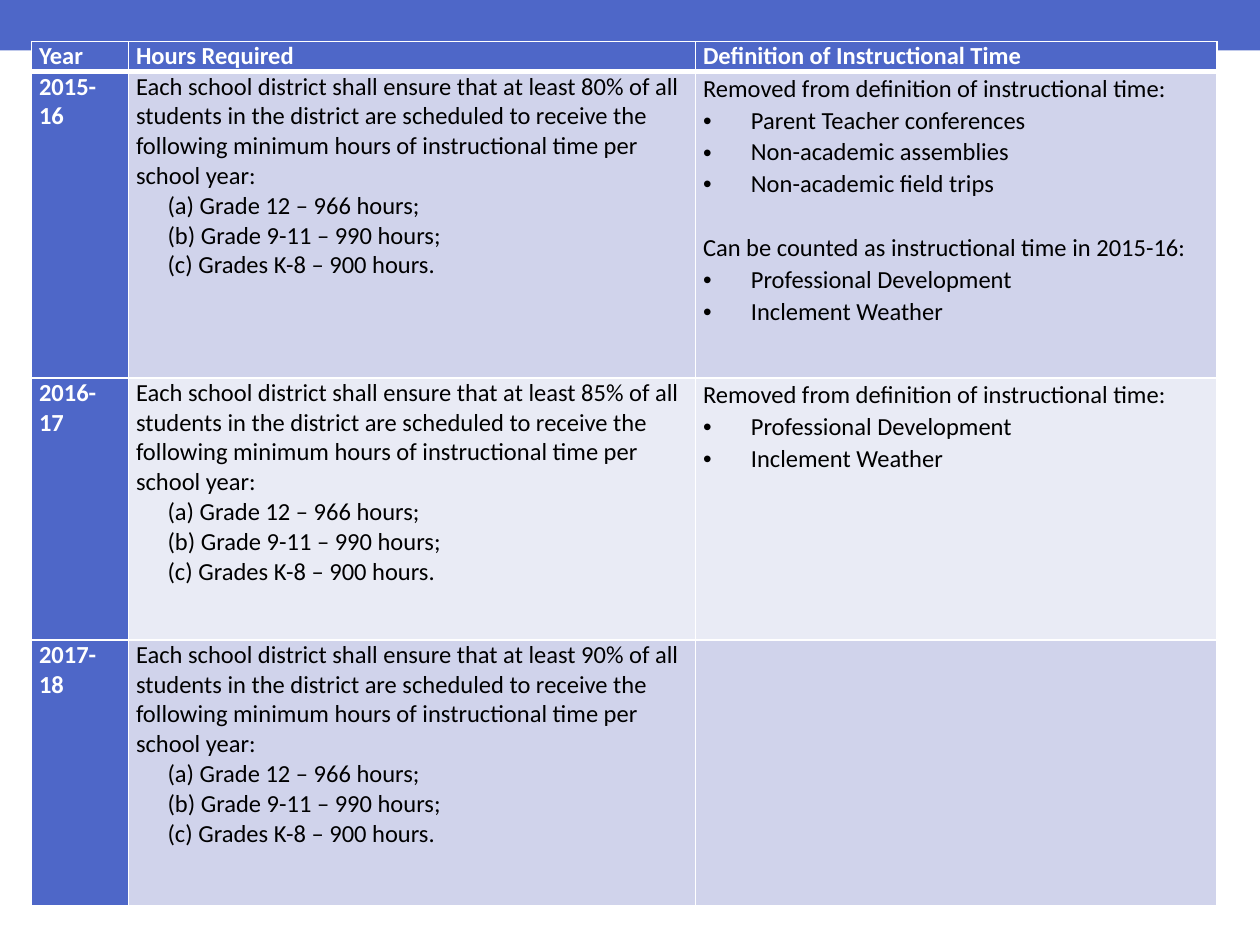
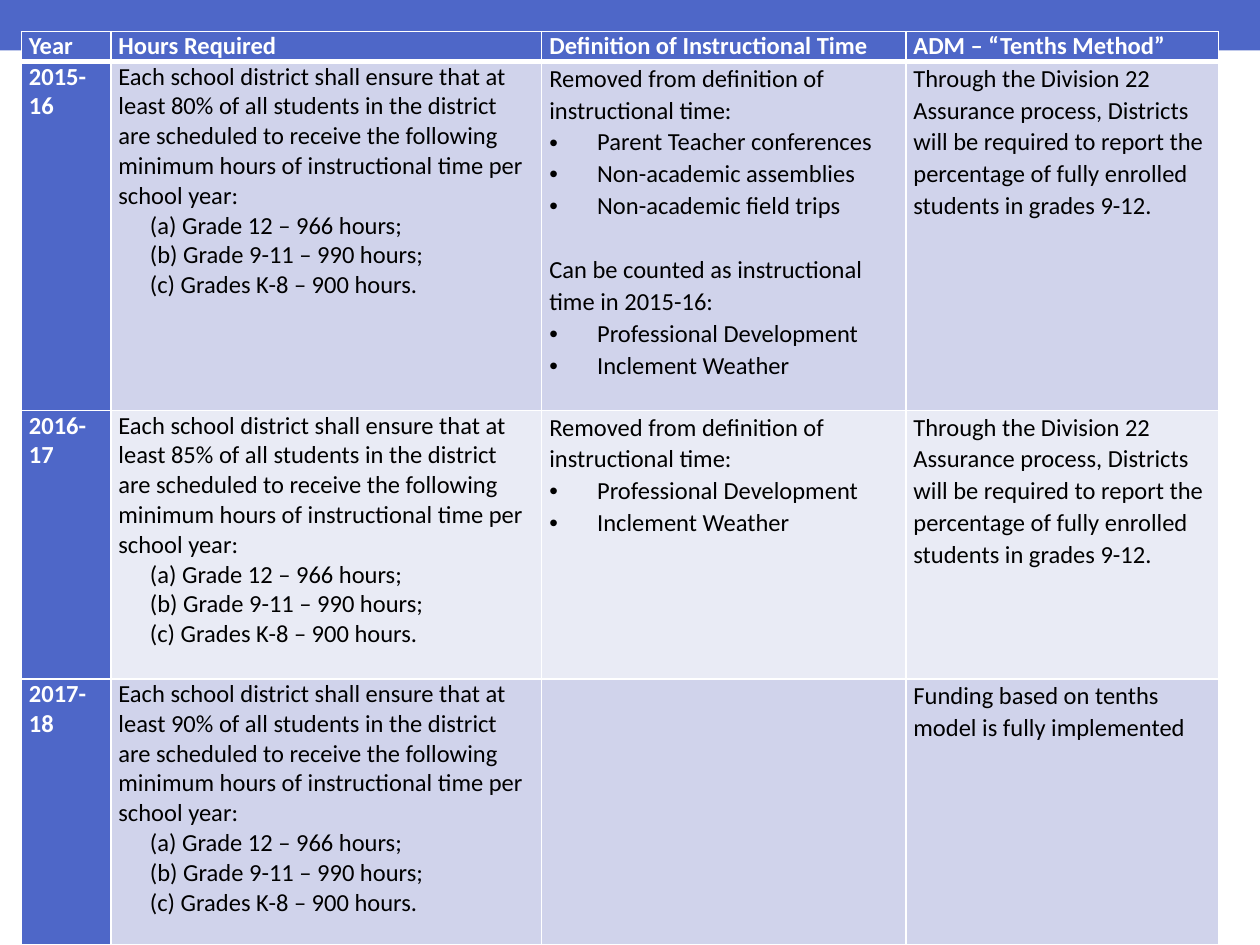
from lxml import etree
from pptx import Presentation
from pptx.dml.color import RGBColor
from pptx.enum.shapes import MSO_SHAPE
from pptx.oxml.ns import qn
from pptx.util import Emu, Inches, Pt

RECTANGLE = MSO_SHAPE.RECTANGLE

BLUE = RGBColor(0x4E, 0x67, 0xC8)
LAVENDER = RGBColor(0xD0, 0xD3, 0xEB)
PALE = RGBColor(0xE9, 0xEB, 0xF5)
WHITE = RGBColor(0xFF, 0xFF, 0xFF)
BLACK = RGBColor(0, 0, 0)

FONT, SIZE = "Calibri", Pt(14)
BAND_HEIGHT = Inches(0.4)
HEADER_HEIGHT = 0.24
CELL_MARGIN = Inches(0.06)
GRADE_INDENT = Inches(0.25)
BULLET_INDENT = Inches(0.38)
LOOSE = 1.07        # line spacing outside the year and hours columns
GROUP_GAP = Pt(18.2)  # one loose line between groups in a cell
THIN, THICK = Pt(1), Pt(3)

# Content: a paragraph is (kind, text)
HEADERS = ["Year", "Hours Required", "Definition of Instructional Time",
           "ADM – “Tenths Method”"]
YEARS = [("2015-16", 80), ("2016-17", 85), ("2017-18", 90)]
GRADES = ["(a) Grade 12 – 966 hours;", "(b) Grade 9-11 – 990 hours;",
          "(c) Grades K-8 – 900 hours."]
REMOVED = ("loose", "Removed from definition of instructional time:")
NEW_LIMITS = [("bullet", "Professional Development"),
              ("bullet", "Inclement Weather")]
DEFINITIONS = [
    [REMOVED,
     ("bullet", "Parent Teacher conferences"),
     ("bullet", "Non-academic assemblies"),
     ("bullet", "Non-academic field trips"),
     ("group", "Can be counted as instructional time in 2015-16:"),
     *NEW_LIMITS],
    [REMOVED, *NEW_LIMITS],
    [],
]
REPORTING = [("loose", "Through the Division 22 Assurance process, Districts will be "
              "required to report the percentage of fully enrolled students "
              "in grades 9-12.")]
ADM = [REPORTING, REPORTING,
       [("loose", "Funding based on tenths model is fully implemented")]]


def hours_required(percent):
    intro = (f"Each school district shall ensure that at least {percent}% of all "
             "students in the district are scheduled to receive the following "
             "minimum hours of instructional time per school year:")
    return [("plain", intro)] + [("grade", grade) for grade in GRADES]


def table_rows(column_count):
    """Rows of cells, header first, limited to the leading columns."""
    rows = [[[("plain", header)] for header in HEADERS]]
    for (year, percent), definition, adm in zip(YEARS, DEFINITIONS, ADM):
        rows.append([[("plain", year)], hours_required(percent), definition, adm])
    return [row[:column_count] for row in rows]


def add_band(prs, slide):
    band = slide.shapes.add_shape(RECTANGLE, 0, 0, prs.slide_width, BAND_HEIGHT)
    band.shadow.inherit = False
    band.fill.solid()
    band.fill.fore_color.rgb = BLUE
    band.line.fill.background()


def set_borders(cell, top, bottom):
    tc_pr = cell._tc.get_or_add_tcPr()
    for side, width in (("L", THIN), ("R", THIN), ("T", top), ("B", bottom)):
        line = etree.SubElement(tc_pr, qn(f"a:ln{side}"), w=str(width))
        fill = etree.SubElement(line, qn("a:solidFill"))
        etree.SubElement(fill, qn("a:srgbClr"), val=str(WHITE))


def format_paragraph(p, kind):
    p_pr = p._p.get_or_add_pPr()
    if kind == "grade":
        p_pr.set("marL", str(GRADE_INDENT))
    elif kind == "bullet":
        p_pr.set("marL", str(BULLET_INDENT))
        p_pr.set("indent", str(-BULLET_INDENT))
        etree.SubElement(p_pr, qn("a:buFont"), typeface="Arial")
        etree.SubElement(p_pr, qn("a:buChar"), char="•")
    if kind in ("loose", "bullet", "group"):
        p.line_spacing = LOOSE
    if kind == "group":
        p.space_before = GROUP_GAP


def write_cell(cell, paragraphs, color, bold):
    cell.margin_left = cell.margin_right = CELL_MARGIN
    cell.margin_top = cell.margin_bottom = Emu(0)
    tf = cell.text_frame
    tf.text = "\n".join(text for _, text in paragraphs)
    for p, (kind, _) in zip(tf.paragraphs, paragraphs):
        format_paragraph(p, kind)
        for r in p.runs:
            r.font.name, r.font.size = FONT, SIZE
            r.font.bold = bold
            r.font.color.rgb = color


def add_hours_table(slide, left, top, widths, year_heights):
    rows = table_rows(len(widths))
    heights = [HEADER_HEIGHT, *year_heights]
    table = slide.shapes.add_table(
        len(rows), len(widths), Inches(left), Inches(top),
        Inches(sum(widths)), Inches(sum(heights))).table
    table.horz_banding = False
    for column, width in zip(table.columns, widths):
        column.width = Inches(width)
    for i, (row, height) in enumerate(zip(rows, heights)):
        table.rows[i].height = Inches(height)
        for j, paragraphs in enumerate(row):
            cell = table.cell(i, j)
            heading = i == 0 or j == 0
            set_borders(cell, THICK if i == 1 else THIN, THICK if i == 0 else THIN)
            cell.fill.solid()
            cell.fill.fore_color.rgb = BLUE if heading else LAVENDER if i % 2 else PALE
            write_cell(cell, paragraphs, WHITE if heading else BLACK, heading)


def add_table_slide(prs, **layout):
    slide = prs.slides.add_slide(prs.slide_layouts.get_by_name("Blank"))
    add_band(prs, slide)
    add_hours_table(slide, **layout)


def main():
    prs = Presentation()
    prs.slide_width, prs.slide_height = Inches(10), Inches(7.5)
    # Hours and definitions
    add_table_slide(prs, left=0.25, top=0.33, widths=[0.77, 4.5, 4.14],
                    year_heights=[2.43, 2.08, 2.11])
    # Hours, definitions and ADM
    add_table_slide(prs, left=0.17, top=0.25, widths=[0.71, 3.42, 2.89, 2.48],
                    year_heights=[2.77, 2.13, 2.11])
    prs.save("out.pptx")


if __name__ == "__main__":
    main()
